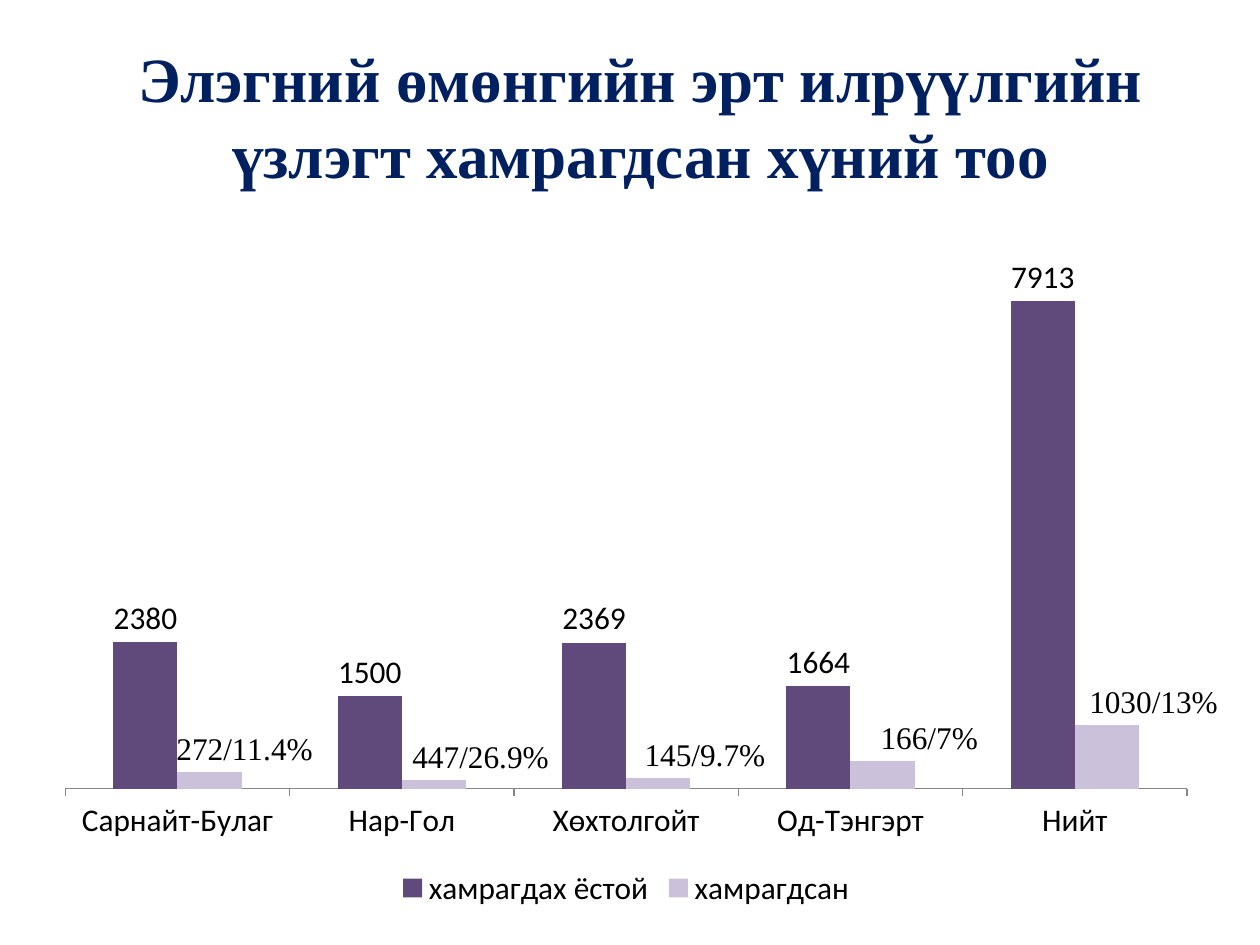
"""Build a slide with a clustered column chart of liver cancer screening coverage."""
from lxml import etree
from pptx import Presentation, util as u
from pptx.chart.data import CategoryChartData
from pptx.dml.color import RGBColor
from pptx.enum import chart as ch, text
from pptx.oxml.ns import qn

COLORS = {"title": "002060", "text": "000000", "axis": "868686",
          "planned": "604A7B", "screened": "CCC1DA", "page": "FFFFFF"}
TITLE = "Элэгний өмөнгийн эрт илрүүлгийн үзлэгт хамрагдсан хүний тоо"
CLINICS = ["Сарнайт-Булаг", "Нар-Гол", "Хөхтолгойт", "Од-Тэнгэрт", "Нийт"]
SERIES = [("хамрагдах ёстой", "planned", [2380, 1500, 2369, 1664, 7913]),
          ("хамрагдсан", "screened", [272, 145, 166, 447, 1030])]
SHARES = [("272/11.4%", 0.03), ("447/26.9%", 0.04), ("145/9.7%", 0.04),
          ("166/7%", 0.04), ("1030/13%", 0.04)]
TITLE_BOX = (36, 24, 660, 84)
CHART_BOX = (24, 126, 672, 396)
PLOT = {"layoutTarget": "inner", "xMode": "edge", "yMode": "edge",
        "x": 0.02, "y": 0.02, "w": 0.96, "h": 0.8}


def rgb(name):
    return RGBColor.from_string(COLORS[name])


def style(font, size, face, color, bold=False):
    font.size, font.name, font.bold = u.Pt(size), face, bold
    font.color.rgb = rgb(color)


def set_layout(parent, index, values):
    for old in parent.findall(qn("c:layout")):
        parent.remove(old)
    layout = etree.Element(qn("c:layout"))
    manual = etree.SubElement(layout, qn("c:manualLayout"))
    for tag, value in values.items():
        etree.SubElement(manual, qn(f"c:{tag}")).set("val", str(value))
    parent.insert(index, layout)


def add_title(page):
    box = page.shapes.add_textbox(*map(u.Pt, TITLE_BOX))
    frame = box.text_frame
    frame.word_wrap = True
    frame.vertical_anchor = text.MSO_ANCHOR.MIDDLE
    para = frame.paragraphs[0]
    para.alignment = text.PP_ALIGN.CENTER
    span = para.add_run()
    span.text = TITLE
    style(span.font, 36, "Times New Roman", "title", True)


def add_screening_chart(page):
    data = CategoryChartData()
    data.categories = CLINICS
    for name, _, values in SERIES:
        data.add_series(name, values)
    chart = page.shapes.add_chart(
        ch.XL_CHART_TYPE.COLUMN_CLUSTERED, *map(u.Pt, CHART_BOX), data).chart
    style(chart.font, 18, "Calibri", "text")
    chart.has_title = False
    chart.has_legend = True
    chart.legend.position = ch.XL_LEGEND_POSITION.BOTTOM
    chart.legend.include_in_layout = False

    clinics, people = chart.category_axis, chart.value_axis
    clinics.major_tick_mark = ch.XL_TICK_MARK.OUTSIDE
    clinics.format.line.color.rgb = rgb("axis")
    people.visible = False
    people.has_major_gridlines = False
    people.minimum_scale, people.maximum_scale = 0, 9000

    plot = chart.plots[0]
    plot.gap_width, plot.overlap = 150, 0
    plot.vary_by_categories = False
    for series, (_, color, _) in zip(plot.series, SERIES):
        series.format.fill.solid()
        series.format.fill.fore_color.rgb = rgb(color)
        series.data_labels.show_value = True
        series.data_labels.position = ch.XL_LABEL_POSITION.OUTSIDE_END
    add_share_labels(plot.series[1])
    set_layout(chart._chartSpace.find(".//" + qn("c:plotArea")), 0, PLOT)


def add_share_labels(series):
    for index, (share, _) in enumerate(SHARES):
        label = series.points[index].data_label
        span = label.text_frame.paragraphs[0].add_run()
        span.text = share
        style(span.font, 18, "Times New Roman", "text")
        label.position = ch.XL_LABEL_POSITION.OUTSIDE_END
    labels = series._element.iter(qn("c:dLbl"))
    for element, (_, shift) in zip(list(labels), SHARES):
        set_layout(element, 1, {"x": shift, "y": 0})


def main():
    deck = Presentation()
    deck.slide_width, deck.slide_height = u.Pt(720), u.Pt(540)
    page = deck.slides.add_slide(deck.slide_layouts[6])
    page.background.fill.solid()
    page.background.fill.fore_color.rgb = rgb("page")
    add_title(page)
    add_screening_chart(page)
    deck.save("out.pptx")


if __name__ == "__main__":
    main()
